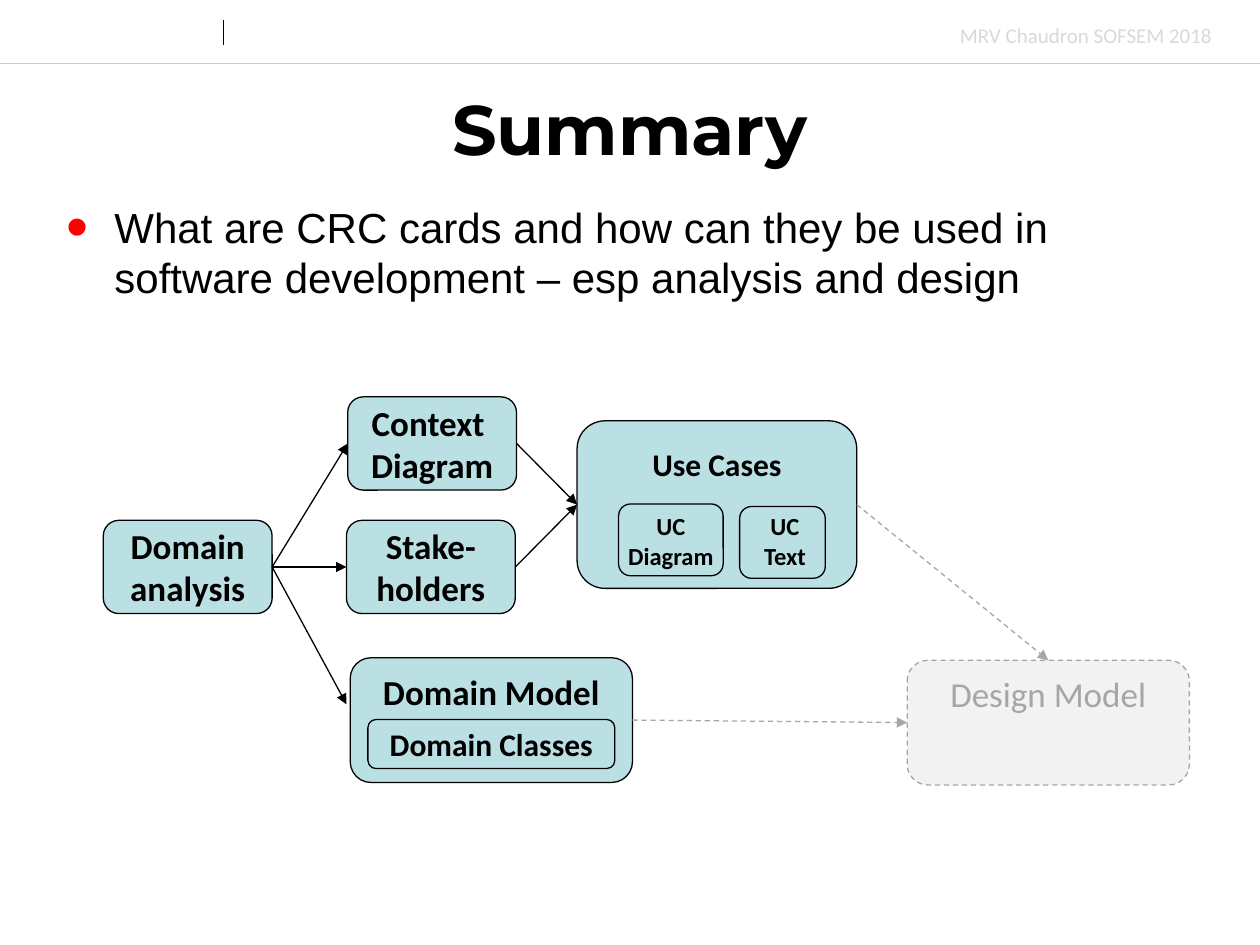
from lxml import etree
from pptx import Presentation
from pptx.dml.color import RGBColor
from pptx.enum import dml, shapes, text
from pptx.oxml.ns import qn
from pptx.util import Inches, Pt

COLORS = {
    "black": "000000", "teal": "BBE0E3", "rule": "CCCCCC", "credit": "D9D9D9",
    "pale": "F2F2F2", "muted": "A6A6A6", "bullet": "FF0000",
}
TOP, LEFT, BOTTOM, RIGHT = range(4)


def rgb(name):
    return RGBColor.from_string(COLORS[name])


def add_bullet(para, indent=0.38):
    props = para._p.get_or_add_pPr()
    props.set("marL", str(Inches(indent)))
    props.set("indent", str(-Inches(indent)))
    color = etree.SubElement(props, qn("a:buClr"))
    etree.SubElement(color, qn("a:srgbClr"), val=COLORS["bullet"])
    etree.SubElement(props, qn("a:buSzPct"), val="150000")
    etree.SubElement(props, qn("a:buFont"), typeface="Arial")
    etree.SubElement(props, qn("a:buChar"), char="•")


def write(box, words, size=20, font="Calibri", color="black", bold=True, center=True,
          middle=False, wrap=True, bullet=False):
    """Fill a box with text: \\n starts a paragraph, \\v breaks a line."""
    frame = box.text_frame
    frame.word_wrap = wrap
    frame.auto_size = text.MSO_AUTO_SIZE.NONE if wrap else text.MSO_AUTO_SIZE.SHAPE_TO_FIT_TEXT
    frame.vertical_anchor = text.MSO_ANCHOR.MIDDLE if middle else text.MSO_ANCHOR.TOP
    frame.text = words
    for para in frame.paragraphs:
        para.alignment = text.PP_ALIGN.CENTER if center else text.PP_ALIGN.LEFT
        if bullet:
            add_bullet(para)
        for span in para.runs:
            span.font.size = Pt(size)
            span.font.name = font
            span.font.bold = bold
            span.font.color.rgb = rgb(color)


class SlideBuilder:
    def __init__(self, deck):
        self.page = deck.slides.add_slide(deck.slide_layouts[5])

    def title(self, words, left, top, width, height):
        box = self.page.shapes.title
        box.left, box.top = Inches(left), Inches(top)
        box.width, box.height = Inches(width), Inches(height)
        write(box, words, size=40, font="Montserrat", middle=True)

    def label(self, words, left, top, width, height, **style):
        box = self.page.shapes.add_textbox(*map(Inches, (left, top, width, height)))
        write(box, words, **style)

    def block(self, left, top, width, height, words="", fill="teal", line="black",
              dashed=False, **style):
        box = self.page.shapes.add_shape(
            shapes.MSO_SHAPE.ROUNDED_RECTANGLE, *map(Inches, (left, top, width, height)))
        box.shadow.inherit = False
        if fill:
            box.fill.solid()
            box.fill.fore_color.rgb = rgb(fill)
        else:
            box.fill.background()
        self.stroke(box.line, line, 0.75, dashed)
        if words:
            write(box, words, **style)
        return box

    def stroke(self, line, color, weight, dashed=False):
        line.color.rgb = rgb(color)
        line.width = Pt(weight)
        if dashed:
            line.dash_style = dml.MSO_LINE.DASH

    def line(self, start, end, color="black", weight=0.75, dashed=False):
        link = self.page.shapes.add_connector(
            shapes.MSO_CONNECTOR.STRAIGHT, *map(Inches, (*start, *end)))
        self.stroke(link.line, color, weight, dashed)
        etree.SubElement(link._element.spPr, qn("a:effectLst"))
        return link

    def arrow(self, source, target=None, side=LEFT, end=(0, 0), **style):
        """Arrow from the right side of a block to a block's side or a free point."""
        link = self.line((0, 0), end, **style)
        link.begin_connect(source, RIGHT)
        if target is not None:
            link.end_connect(target, side)
        etree.SubElement(link.line._get_or_add_ln(), qn("a:tailEnd"), type="triangle")


def main():
    deck = Presentation()
    deck.slide_width, deck.slide_height = Inches(10), Inches(7.5)
    slide = SlideBuilder(deck)

    # Header
    slide.line((0, 0.5), (10, 0.5), color="rule", weight=0.25)
    slide.line((1.77, 0.16), (1.77, 0.36), weight=0.5)
    slide.label("MRV Chaudron SOFSEM 2018", 7.52, 0.13, 2.22, 0.3, size=12,
                color="credit", bold=False, center=False, wrap=False)

    # Title and question
    slide.title("Summary", 0, 0.6, 10, 0.83)
    slide.label("What are CRC cards and how can they be used in software development "
                "– esp analysis and design", 0.43, 1.55, 9.21, 2.61, size=24,
                font="Arial", bold=False, center=False, bullet=True)

    # Analysis steps
    step = (1.34, 0.74)
    domain = slide.block(0.82, 4.13, *step, "Domain analysis", middle=True)
    context = slide.block(2.76, 3.15, *step, "Context \vDiagram", middle=True)
    stakeholders = slide.block(2.75, 4.13, *step, "Stake-holders", middle=True)

    # Use cases
    use_cases = slide.block(4.58, 3.34, 2.22, 1.33)
    slide.label("Use Cases", 5.05, 3.48, 1.28, 0.4, size=18, wrap=False)
    slide.label("UC\vDiagram", 4.86, 4.01, 0.93, 0.57, size=14, wrap=False)
    slide.label("UC\nText", 5.94, 4.01, 0.58, 0.57, size=14, wrap=False)
    slide.block(4.91, 4, 0.83, 0.57, fill=None)
    slide.block(5.87, 4.02, 0.68, 0.57, fill=None)

    # Domain and design models
    model = (2.24, 0.99)
    faded = {"color": "muted", "dashed": True}
    domain_model = slide.block(2.78, 5.22, *model, "Domain Model")
    slide.block(2.92, 5.71, 1.96, 0.39, "Domain Classes", fill=None, size=18, middle=True)
    design_model = slide.block(7.2, 5.24, *model, "Design Model", fill="pale",
                               line="muted", bold=False, **faded)

    # Flow
    for source, target in ((domain, context), (domain, stakeholders),
                           (context, use_cases), (stakeholders, use_cases)):
        slide.arrow(source, target)
    slide.arrow(domain, end=(2.75, 5.59))
    slide.arrow(domain_model, design_model, **faded)
    slide.arrow(use_cases, design_model, side=TOP, **faded)

    deck.save("out.pptx")


if __name__ == "__main__":
    main()
